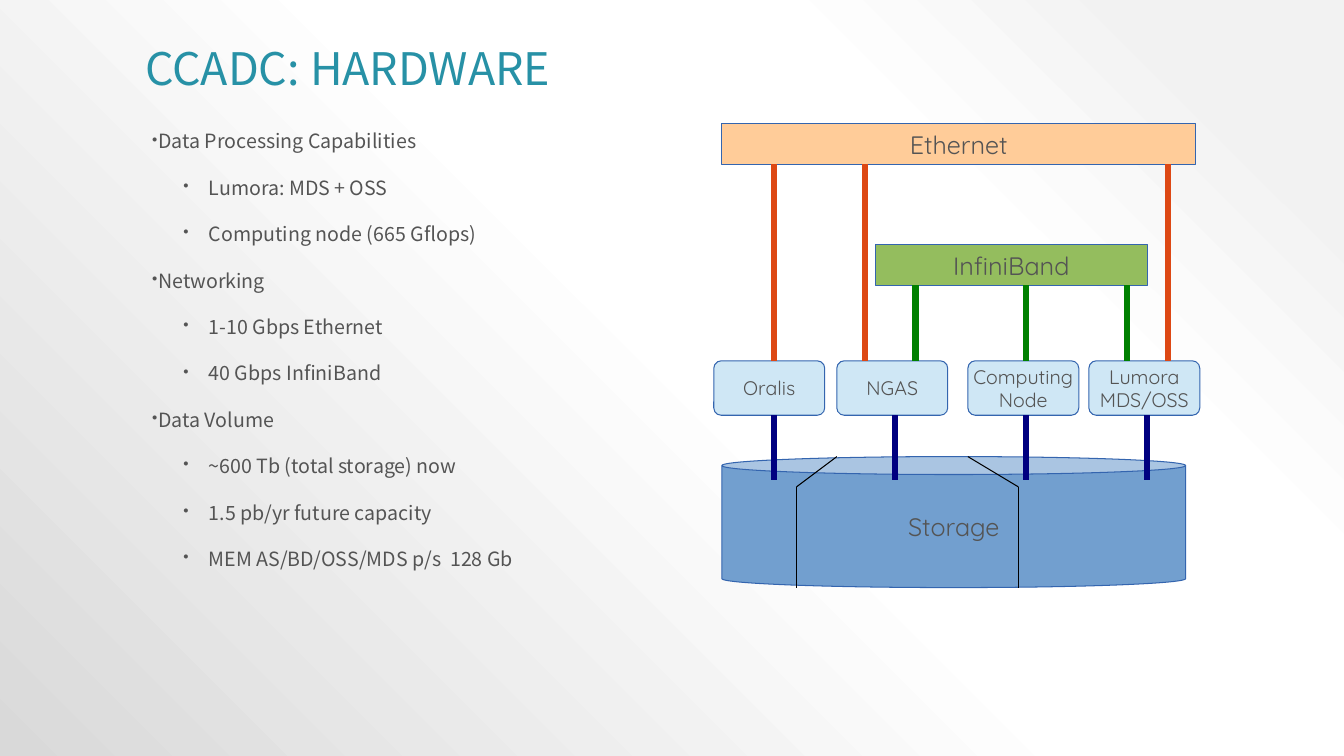
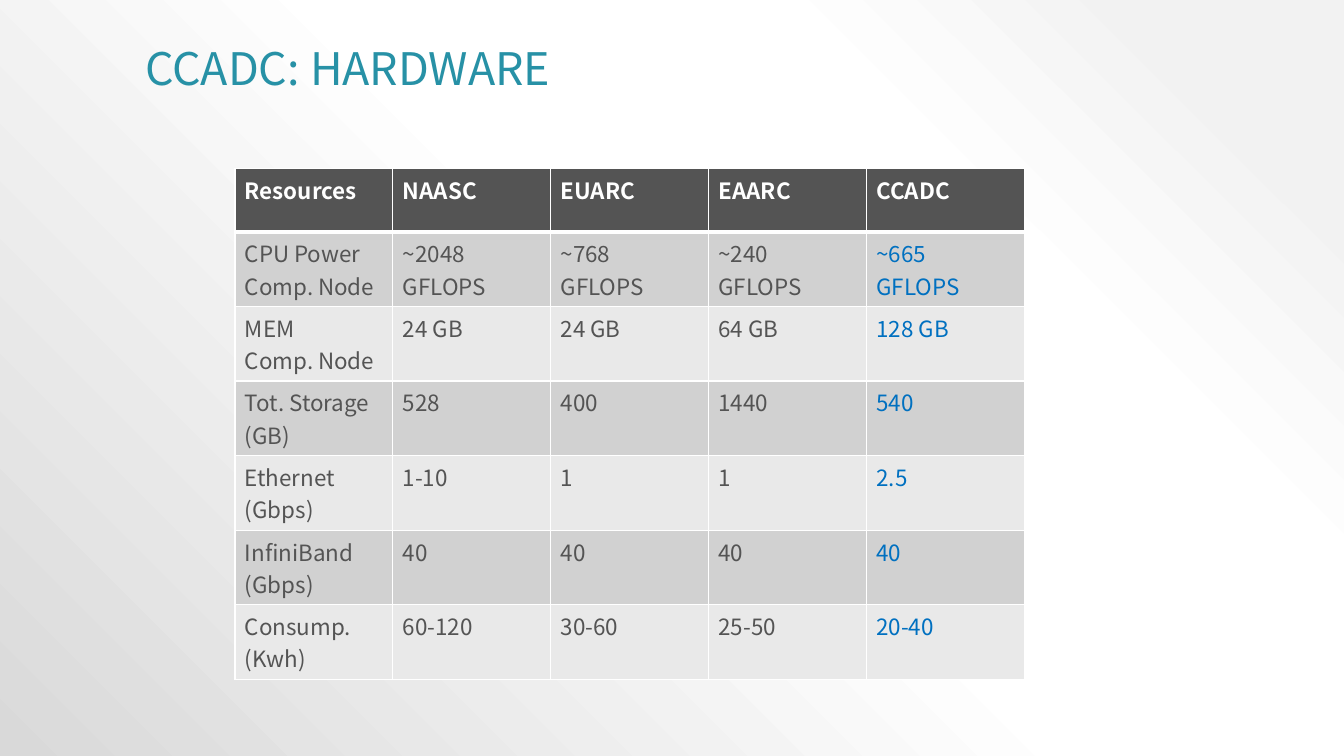
from pptx import Presentation
from pptx.dml.color import RGBColor
from pptx.enum.shapes import MSO_CONNECTOR as Connector, MSO_SHAPE as Shape
from pptx.enum.text import MSO_ANCHOR as Anchor, PP_ALIGN as Align
from pptx.oxml import parse_xml
from pptx.oxml.ns import nsdecls, qn
from pptx.util import Inches, Pt

TEAL = RGBColor(0x27, 0x91, 0xA6)
GRAY = RGBColor(0x54, 0x54, 0x54)
WHITE = RGBColor(0xFF, 0xFF, 0xFF)
BLACK = RGBColor(0x00, 0x00, 0x00)
OUTLINE = RGBColor(0x34, 0x65, 0xAF)
PEACH = RGBColor(0xFF, 0xCC, 0x99)
LIME = RGBColor(0x94, 0xBD, 0x5E)
SKY = RGBColor(0xCF, 0xE7, 0xF5)
STEEL = RGBColor(0x72, 0x9F, 0xCF)
ORANGE = RGBColor(0xDD, 0x48, 0x14)
GREEN = RGBColor(0x00, 0x80, 0x00)
NAVY = RGBColor(0x00, 0x00, 0x80)
BLUE = RGBColor(0x00, 0x70, 0xC0)
BAND_DARK = RGBColor(0xD1, 0xD1, 0xD1)
BAND_LIGHT = RGBColor(0xE9, 0xE9, 0xE9)
BACKDROP = ((10, "F2F2F2"), (28, "FFFFFF"), (48, "FFFFFF"), (100, "D9D9D9"))

BODY_FONT = "Noto Sans CJK SC"
DIAGRAM_FONT = "Quicksand"
CABLE = 4.31
HAIRLINE = 0.75


class Deck:
    """Holds the shared style and the page being drawn."""

    def __init__(self):
        self.deck = Presentation()
        self.deck.slide_width = Inches(13.33)
        self.deck.slide_height = Inches(7.5)
        self.page = None
        self.paint_backdrop()

    def paint_backdrop(self):
        """Put a circular gradient, centred top right, on the master."""
        master = self.deck.slide_master
        master.background.fill.gradient()
        gradient = next(master.element.iter(qn("a:gradFill")))
        for child in list(gradient):
            gradient.remove(child)
        stops = "".join(
            f'<a:gs pos="{pos * 1000}"><a:srgbClr val="{color}"/></a:gs>'
            for pos, color in BACKDROP)
        gradient.append(parse_xml(f'<a:gsLst {nsdecls("a")}>{stops}</a:gsLst>'))
        gradient.append(parse_xml(
            f'<a:path {nsdecls("a")} path="circle">'
            '<a:fillToRect l="100000" b="100000"/></a:path>'))

    def add_page(self, title):
        self.page = self.deck.slides.add_slide(self.deck.slide_layouts[6])
        frame = self.text_frame(1.34, 0.41, 10.67, 0.58)
        para = frame.paragraphs[0]
        para.line_spacing = 0.9
        self.span(para, title, 32, TEAL)

    def text_frame(self, left, top, width, height):
        box = self.page.shapes.add_textbox(
            Inches(left), Inches(top), Inches(width), Inches(height))
        box.text_frame.word_wrap = True
        return box.text_frame

    def span(self, para, text, size, color=GRAY, font=BODY_FONT, bold=False):
        """Add text to a paragraph, with a line break at each newline."""
        for index, line in enumerate(text.split("\n")):
            if index:
                para.add_line_break()
            run = para.add_run()
            run.text = line
            run.font.size = Pt(size)
            run.font.name = font
            run.font.bold = bold
            run.font.color.rgb = color
            run.font._element.append(parse_xml(
                f'<a:ea {nsdecls("a")} typeface="{font}"/>'))

    def bullets(self, left, top, width, height, items):
        frame = self.text_frame(left, top, width, height)
        frame.margin_left = frame.margin_right = 0
        frame.margin_top = frame.margin_bottom = 0
        for index, (level, text) in enumerate(items):
            para = frame.add_paragraph() if index else frame.paragraphs[0]
            para.level = level
            para.line_spacing = 0.9
            para.space_before = Pt(18)
            props = para._p.get_or_add_pPr()
            props.set("marL", str(Inches(0.06 + 0.5 * bool(level))))
            props.set("indent", str(Inches(-0.25)))
            for xml in (f'<a:buClr {nsdecls("a")}><a:srgbClr val="{GRAY}"/></a:buClr>',
                        f'<a:buSzPct {nsdecls("a")} val="80000"/>',
                        f'<a:buChar {nsdecls("a")} char="•"/>'):
                props.append(parse_xml(xml))
            self.span(para, text, 14)

    def block(self, kind, left, top, width, height, fill, text, size=18, bend=None):
        """Draw an outlined shape with centred text, one paragraph a line."""
        shape = self.page.shapes.add_shape(
            kind, Inches(left), Inches(top), Inches(width), Inches(height))
        shape.shadow.inherit = False
        shape.fill.solid()
        shape.fill.fore_color.rgb = fill
        shape.line.color.rgb = OUTLINE
        shape.line.width = Pt(HAIRLINE)
        if bend is not None:
            shape.adjustments[0] = bend
        frame = shape.text_frame
        frame.word_wrap = False
        frame.vertical_anchor = Anchor.MIDDLE
        for index, line in enumerate(text.split("\n")):
            para = frame.add_paragraph() if index else frame.paragraphs[0]
            para.alignment = Align.CENTER
            self.span(para, line, size, font=DIAGRAM_FONT)

    def line(self, x1, y1, x2, y2, color=BLACK, width=HAIRLINE):
        line = self.page.shapes.add_connector(
            Connector.STRAIGHT, Inches(x1), Inches(y1), Inches(x2), Inches(y2))
        line.line.color.rgb = color
        line.line.width = Pt(width)
        line._element.spPr.append(parse_xml(f'<a:effectLst {nsdecls("a")}/>'))

    def cables(self, xs, bottom, top, color):
        for x in xs:
            self.line(x, bottom, x, top, color, CABLE)

    def cell_borders(self, cell, top, bottom):
        props = cell._tc.get_or_add_tcPr()
        for side, width in (("L", 1), ("R", 1), ("T", top), ("B", bottom)):
            props.append(parse_xml(
                f'<a:ln{side} {nsdecls("a")} w="{Pt(width)}"><a:solidFill>'
                f'<a:srgbClr val="{WHITE}"/></a:solidFill></a:ln{side}>'))

    def table(self, left, top, width, header_height, row_height, rows):
        """Draw a banded table whose last column is highlighted."""
        columns = len(rows[0])
        height = header_height + row_height * (len(rows) - 1)
        table = self.page.shapes.add_table(
            len(rows), columns, Inches(left), Inches(top),
            Inches(width), Inches(height)).table
        for r, row in enumerate(rows):
            header = r == 0
            table.rows[r].height = Inches(header_height if header else row_height)
            fill = GRAY if header else BAND_DARK if r % 2 else BAND_LIGHT
            for c, text in enumerate(row):
                cell = table.cell(r, c)
                self.cell_borders(cell, 3 if r == 1 else 1, 3 if header else 1)
                cell.fill.solid()
                cell.fill.fore_color.rgb = fill
                color = WHITE if header else BLUE if c == columns - 1 else GRAY
                self.span(cell.text_frame.paragraphs[0], text, 16, color, bold=header)


TITLE = "CCADC: HARDWARE"

CAPABILITIES = (
    (0, "Data Processing Capabilities"),
    (2, "Lumora: MDS + OSS"),
    (2, "Computing node (665 Gflops)"),
    (0, "Networking"),
    (2, "1-10 Gbps Ethernet"),
    (2, "40 Gbps InfiniBand"),
    (0, "Data Volume"),
    (2, "~600 Tb (total storage) now"),
    (1, "1.5 pb/yr future capacity"),
    (2, "MEM AS/BD/OSS/MDS p/s  128 Gb"),
)

SERVERS = (
    (10.8, "Lumora\nMDS/OSS"),
    (9.6, "Computing\nNode"),
    (8.3, "NGAS"),
    (7.08, "Oralis"),
)

RESOURCES = (
    ("Resources", "NAASC", "EUARC", "EAARC", "CCADC"),
    ("CPU Power\nComp. Node", "~2048\nGFLOPS", "~768\nGFLOPS", "~240\nGFLOPS",
     "~665\nGFLOPS"),
    ("MEM\nComp. Node", "24 GB", "24 GB", "64 GB", "128 GB"),
    ("Tot. Storage\n(GB)", "528", "400", "1440", "540"),
    ("Ethernet\n(Gbps)", "1-10", "1", "1", "2.5"),
    ("InfiniBand\n(Gbps)", "40", "40", "40", "40"),
    ("Consump.\n(Kwh)", "60-120", "30-60", "25-50", "20-40"),
)


def draw_network(deck):
    server_top, server_bottom = 3.58, 4.12
    storage_top, storage_bottom, seam = 4.53, 5.83, 4.83
    deck.block(Shape.RECTANGLE, 8.68, 2.43, 2.7, 0.4, LIME, "InfiniBand")
    deck.block(Shape.CAN, 7.16, storage_top, 4.6, storage_bottom - storage_top,
               STEEL, "Storage", bend=0.137)
    for left, name in SERVERS:
        deck.block(Shape.ROUNDED_RECTANGLE, left, server_top, 1.1,
                   server_bottom - server_top, SKY, name, 14, 0.137)
    deck.block(Shape.RECTANGLE, 7.16, 1.23, 4.7, 0.4, PEACH, "Ethernet")
    deck.cables((8.58, 7.68, 11.58), server_top, 1.63, ORANGE)
    deck.cables((9.08, 10.18, 11.18), server_top, 2.83, GREEN)
    deck.cables((7.68, 8.88, 10.18, 11.38), 4.76, server_bottom, NAVY)
    for rim, wall in ((8.3, 7.9), (9.6, 10.1)):
        deck.line(rim, storage_top, wall, seam)
        deck.line(wall, seam, wall, storage_bottom)


def main():
    deck = Deck()
    deck.add_page(TITLE)
    deck.bullets(1.51, 1.31, 4.49, 5.36, CAPABILITIES)
    draw_network(deck)
    deck.add_page(TITLE)
    deck.table(2.33, 1.67, 7.83, 0.63, 0.74, RESOURCES)
    deck.deck.save("out.pptx")


if __name__ == "__main__":
    main()
